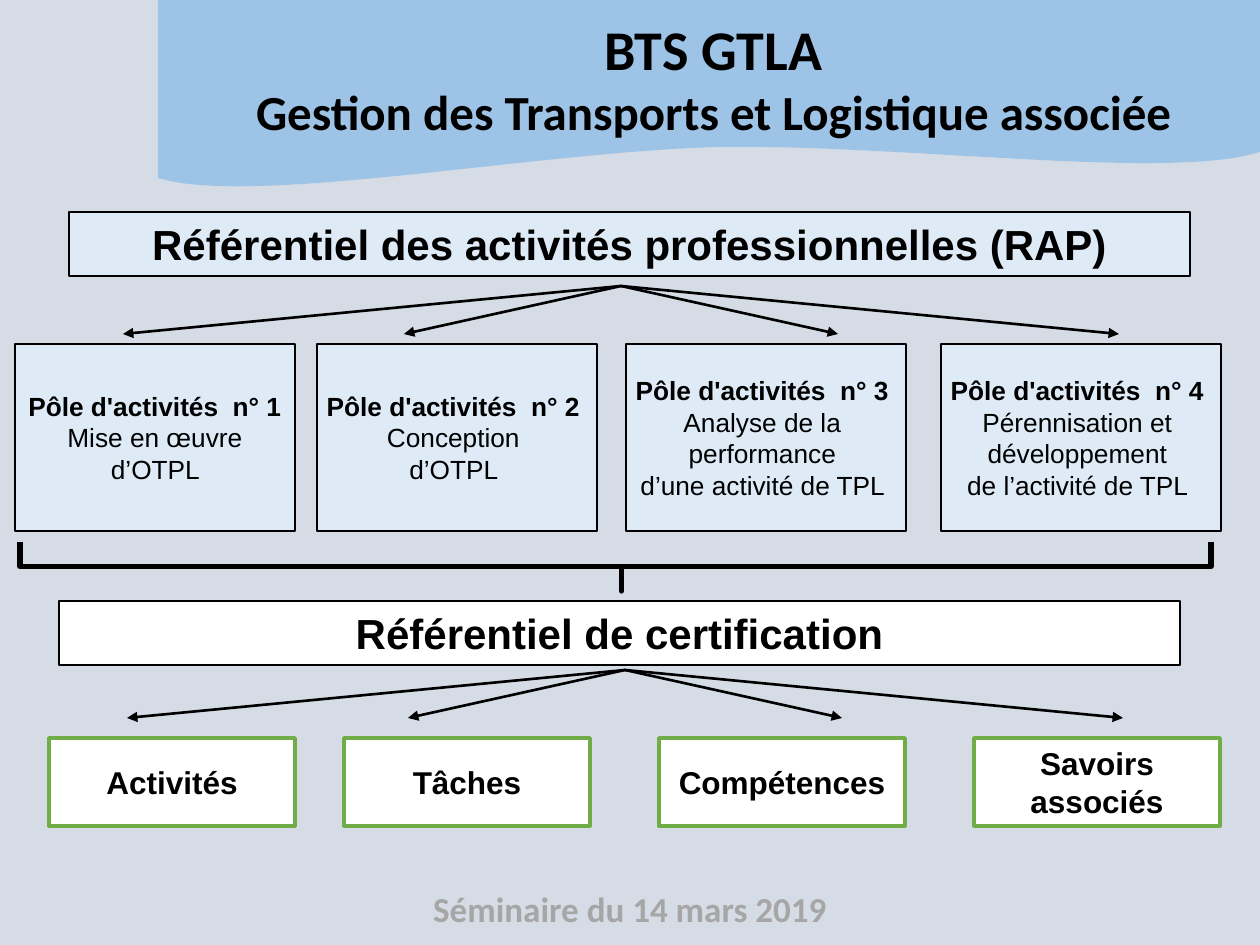
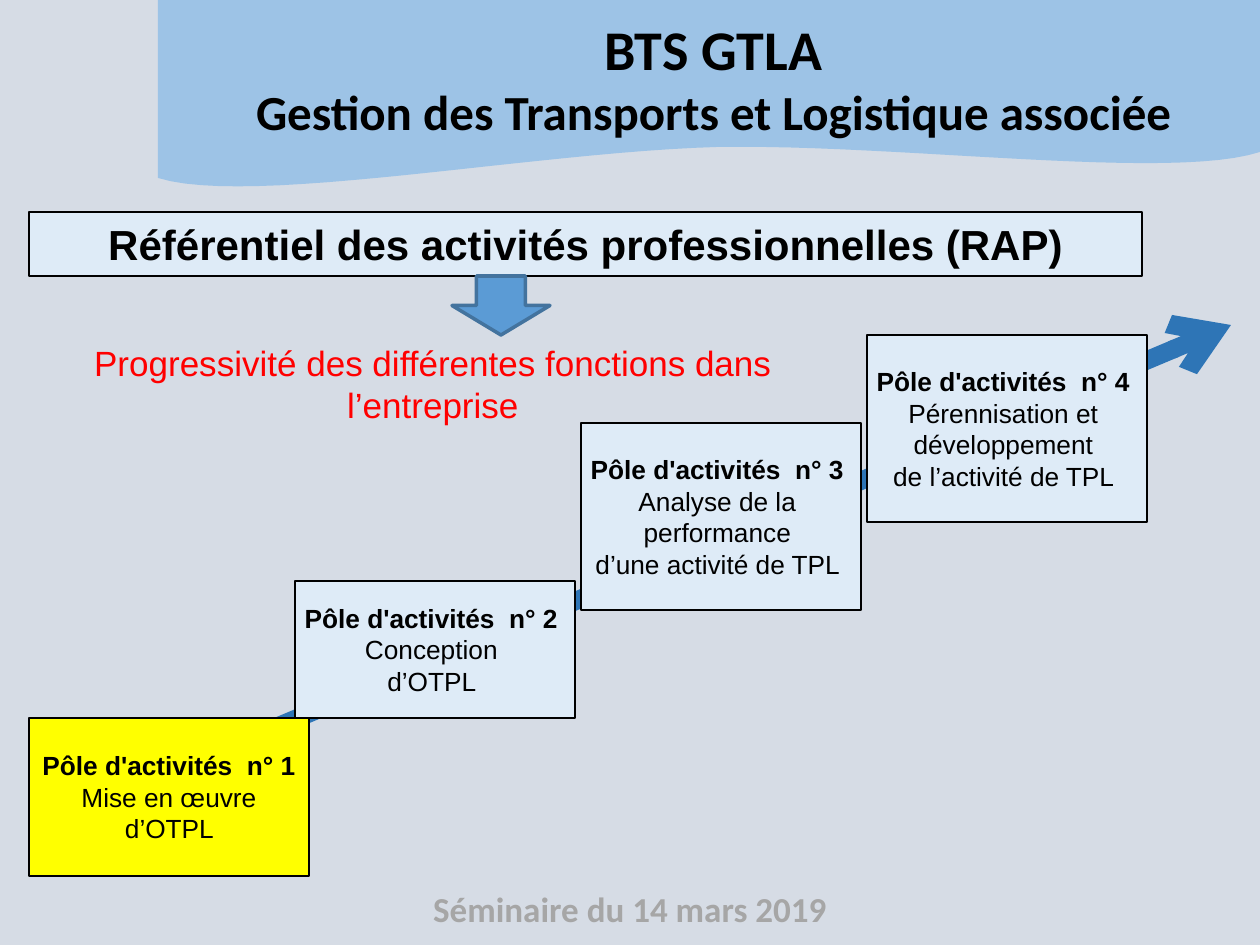
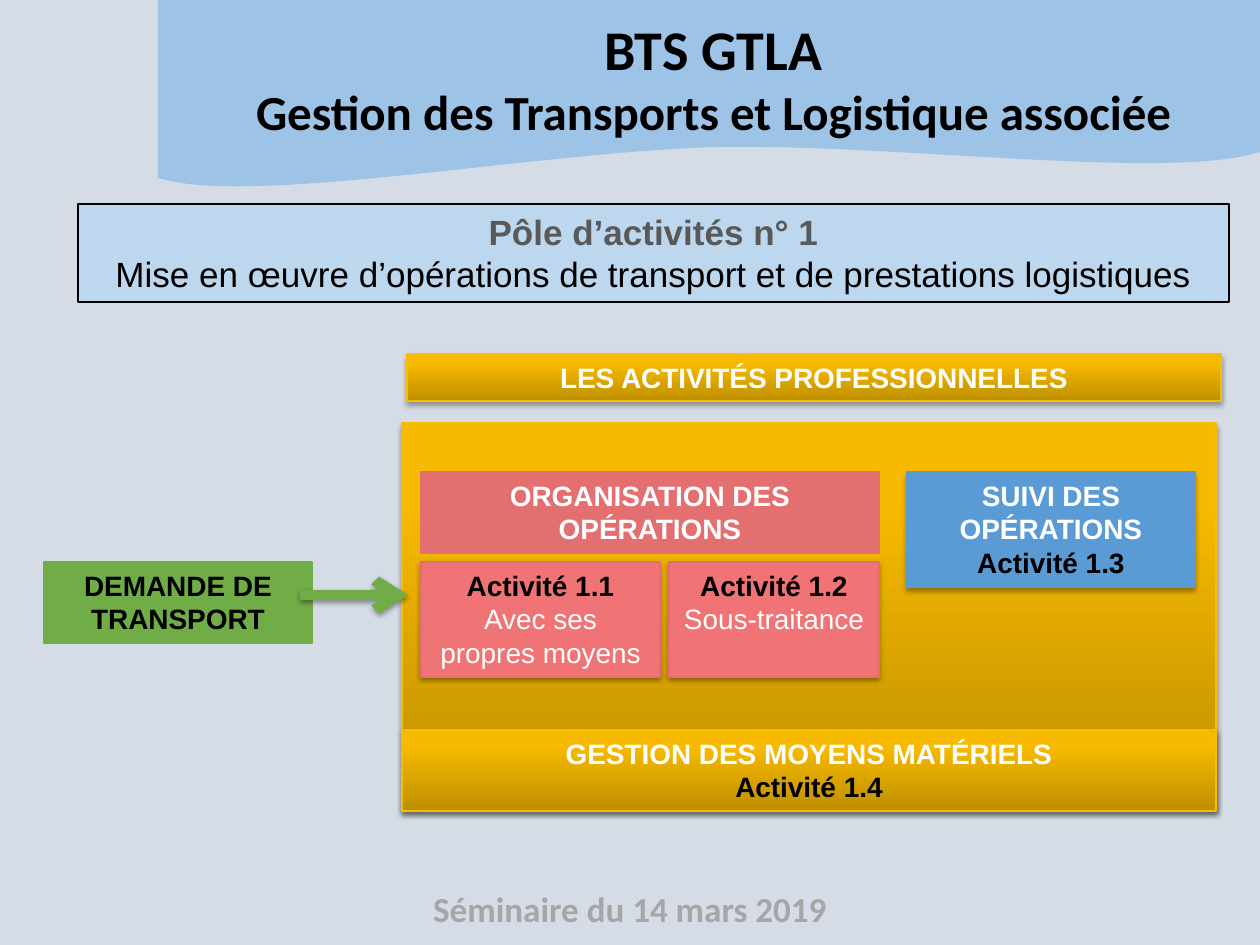
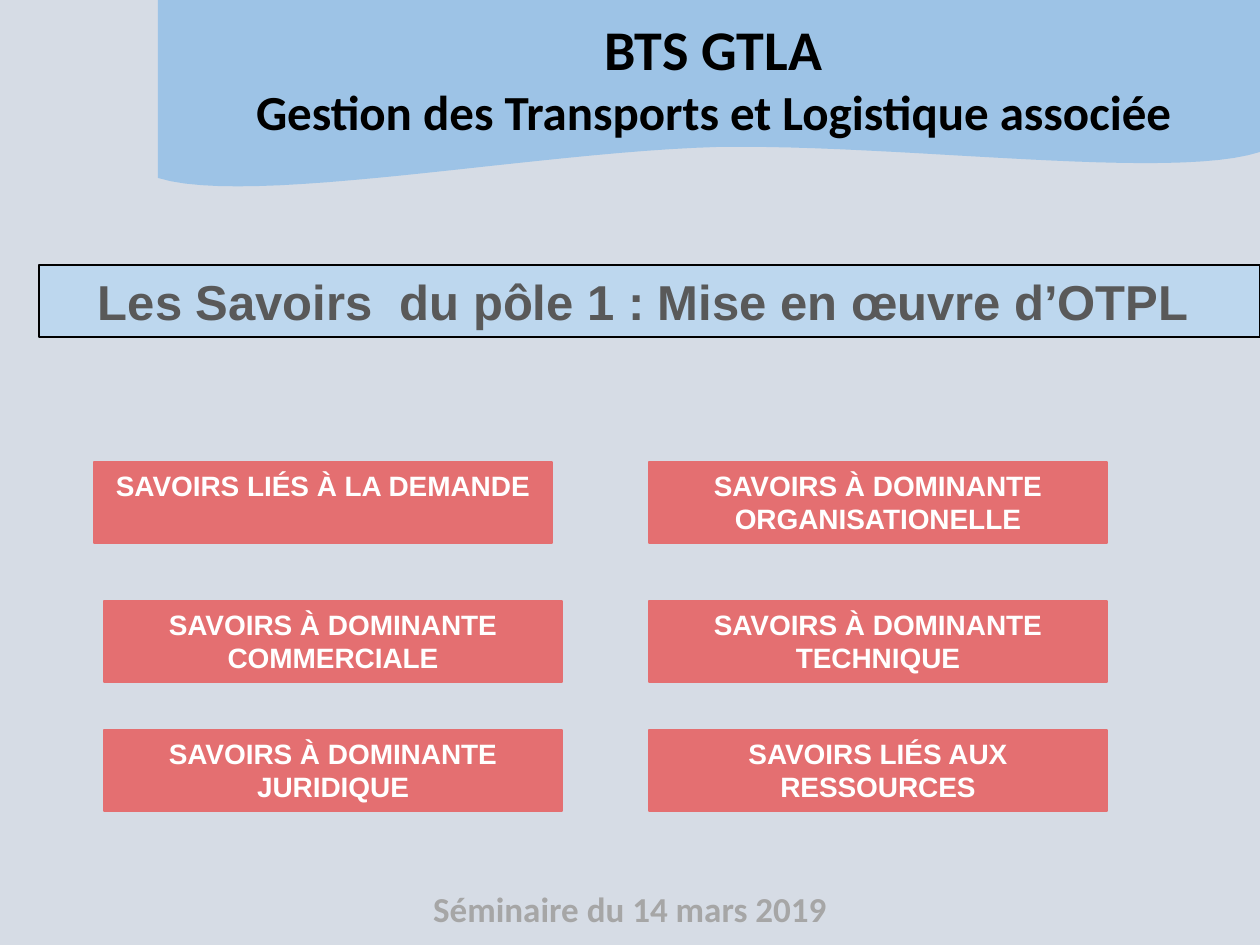
from copy import deepcopy

from lxml.etree import SubElement
from pptx import Presentation
from pptx.dml.color import RGBColor
from pptx.enum.shapes import MSO_CONNECTOR, MSO_SHAPE
from pptx.enum.text import MSO_ANCHOR, PP_ALIGN
from pptx.oxml.ns import qn
from pptx.util import Emu, Pt

EMU_PER_PX = 914400 / 126
WIDTH, HEIGHT = 1260, 945

BLACK = RGBColor(0x00, 0x00, 0x00)
WHITE = RGBColor(0xFF, 0xFF, 0xFF)
BACKDROP = RGBColor(0xD6, 0xDC, 0xE5)
WAVE_BLUE = RGBColor(0x9D, 0xC3, 0xE6)
PALE_BLUE = RGBColor(0xDE, 0xEB, 0xF7)
SOFT_BLUE = RGBColor(0xBD, 0xD7, 0xEE)
BLUE = RGBColor(0x5B, 0x9B, 0xD5)
BLUE_EDGE = RGBColor(0x43, 0x73, 0x9E)
DEEP_BLUE = RGBColor(0x2E, 0x75, 0xB6)
GREEN = RGBColor(0x70, 0xAD, 0x47)
YELLOW = RGBColor(0xFF, 0xFF, 0x00)
RED = RGBColor(0xFF, 0x00, 0x00)
CORAL = RGBColor(0xE4, 0x6F, 0x71)
LIGHT_CORAL = RGBColor(0xF0, 0x74, 0x76)
GOLD_EDGE = RGBColor(0xF9, 0xBC, 0x00)
GREY = RGBColor(0x59, 0x59, 0x59)
FOOTER_GREY = RGBColor(0xA6, 0xA6, 0xA6)
GOLD = [(0, RGBColor(0xBE, 0x8F, 0x00)),
        (0.8, RGBColor(0xF7, 0xBA, 0x00)),
        (1, RGBColor(0xF8, 0xBB, 0x00))]

STRONG_SHADOW = (38, 1.6)
SOFT_SHADOW = (35, 1.8)

BAND = (24, BLACK, True)
POLE_NAME = (15, BLACK, True)
POLE_DETAIL = (15, BLACK, False)
LEAF = (18, BLACK, True)
LABEL_WHITE = (16, WHITE, True)
LABEL_BLACK = (16, BLACK, True)
LABEL_PLAIN = (16, WHITE, False)

TITLE = [("BTS GTLA", (32, BLACK, True)),
         ("Gestion des Transports et Logistique associée", (28, BLACK, True))]
FOOTER = [("Séminaire du 14 mars 2019", (20, FOOTER_GREY, True))]
WAVE_TOP = [(158, 0), (1260, 0), (1260, 152)]
WAVE_CURVES = [[(1260, 152), (1171, 181), (902, 144), (718, 147)],
               [(718, 147), (534, 152), (251, 207), (158, 178)]]

RAP = "Référentiel des activités professionnelles (RAP)"
POLES = [
    ["Pôle d'activités  n° 1", "Mise en œuvre", " d’OTPL "],
    ["Pôle d'activités  n° 2 ", "Conception ", "d’OTPL "],
    ["Pôle d'activités  n° 3 ", "Analyse de la ", "performance ",
     "d’une activité de TPL "],
    ["Pôle d'activités  n° 4 ", "Pérennisation et ", "développement ",
     "de l’activité de TPL "],
]
POLE_LEFTS = [15, 317, 626, 941]
POLE_STEPS = [(29, 718, 280, 158), (295, 581, 280, 137),
              (581, 423, 280, 187), (867, 335, 280, 187)]
CERTIFICATION = "Référentiel de certification"
CERTIFICATION_PARTS = [(49, "Activités"), (344, "Tâches"),
                       (659, "Compétences"), (974, "Savoirs associés")]
FAN_REACH = [-498, 498, -217, 217]
FAN_DROP = 48
FANS = [(621, 286), (625, 670)]
BRACE = (20, 542, 1191, 49)

PROGRESSION = "Progressivité des différentes fonctions dans l’entreprise"

POLE_1 = [("Pôle d’activités n° 1", (20, GREY, True)),
          ("Mise en œuvre d’opérations de transport et de prestations logistiques",
           (20, BLACK, False))]
ACTIVITY_BLOCKS = [
    ((402, 423, 814, 387), GOLD, GOLD_EDGE, SOFT_SHADOW, []),
    ((44, 562, 268, 81), GREEN, GREEN, None,
     [("DEMANDE DE TRANSPORT", LABEL_BLACK)]),
    ((421, 472, 458, 81), CORAL, CORAL, None,
     [("ORGANISATION DES OPÉRATIONS", LABEL_WHITE)]),
    ((421, 562, 239, 115), LIGHT_CORAL, CORAL, STRONG_SHADOW,
     [("Activité 1.1", LABEL_BLACK), ("Avec ses propres moyens", LABEL_PLAIN)]),
    ((669, 562, 210, 115), LIGHT_CORAL, CORAL, STRONG_SHADOW,
     [("Activité 1.2", LABEL_BLACK), ("Sous-traitance", LABEL_PLAIN)]),
    ((907, 472, 288, 115), BLUE, BLUE, SOFT_SHADOW,
     [("SUIVI DES OPÉRATIONS", LABEL_WHITE), ("Activité 1.3", LABEL_BLACK)]),
    ((402, 730, 814, 81), GOLD, GOLD_EDGE, SOFT_SHADOW,
     [("GESTION DES MOYENS MATÉRIELS", LABEL_WHITE), ("Activité 1.4", LABEL_BLACK)]),
    ((407, 354, 814, 47), GOLD, GOLD_EDGE, SOFT_SHADOW,
     [("LES ACTIVITÉS PROFESSIONNELLES", LABEL_WHITE)]),
]

SAVOIRS_TITLE = "Les Savoirs  du pôle 1 : Mise en œuvre d’OTPL "
SAVOIRS = [
    (94, 462, "SAVOIRS LIÉS À LA DEMANDE"),
    (649, 462, "SAVOIRS À DOMINANTE ORGANISATIONELLE"),
    (104, 601, "SAVOIRS À DOMINANTE COMMERCIALE"),
    (649, 601, "SAVOIRS À DOMINANTE TECHNIQUE"),
    (104, 730, "SAVOIRS À DOMINANTE JURIDIQUE"),
    (649, 730, "SAVOIRS LIÉS AUX RESSOURCES"),
]


def px(*lengths):
    return [Emu(round(length * EMU_PER_PX)) for length in lengths]


def write(shape, lines, font="Arial", anchor=MSO_ANCHOR.TOP, wrap=True):
    frame = shape.text_frame
    frame.word_wrap = wrap
    frame.vertical_anchor = anchor
    frame.text = "\n".join(text for text, _ in lines)
    for paragraph, (_, (size, color, bold)) in zip(frame.paragraphs, lines):
        paragraph.alignment = PP_ALIGN.CENTER
        for run in paragraph.runs:
            run.font.name = font
            run.font.size = Pt(size)
            run.font.bold = bold
            run.font.color.rgb = color


def set_effects(shape, shadow=None):
    properties = shape._element.spPr
    for effects in properties.findall(qn("a:effectLst")):
        properties.remove(effects)
    effects = SubElement(properties, qn("a:effectLst"))
    if shadow:
        opacity, distance = shadow
        outer = SubElement(effects, qn("a:outerShdw"), blurRad=str(Pt(3.1)),
                           dist=str(Pt(distance)), dir="5400000", rotWithShape="0")
        color = SubElement(outer, qn("a:srgbClr"), val=str(BLACK))
        SubElement(color, qn("a:alpha"), val=str(opacity * 1000))


def paint(shape, fill):
    if fill is None:
        shape.fill.background()
    elif isinstance(fill, RGBColor):
        shape.fill.solid()
        shape.fill.fore_color.rgb = fill
    else:
        shape.fill.gradient()
        shape.fill.gradient_angle = 90
        stops = shape._element.spPr.find(".//" + qn("a:gsLst"))
        stops.append(deepcopy(stops[-1]))
        for stop, (position, color) in zip(shape.fill.gradient_stops, fill):
            stop.position = position
            stop.color.rgb = color


def add_block(slide, frame, fill, edge=BLACK, weight=0.75, kind=MSO_SHAPE.RECTANGLE,
              shadow=None, lines=(), anchor=MSO_ANCHOR.MIDDLE, wrap=True):
    block = slide.shapes.add_shape(kind, *px(*frame))
    paint(block, fill)
    block.line.color.rgb = edge
    block.line.width = Pt(weight)
    set_effects(block, shadow)
    if lines:
        write(block, lines, anchor=anchor, wrap=wrap)
    return block


def add_text(slide, frame, lines, font="Arial"):
    text = slide.shapes.add_textbox(*px(*frame))
    write(text, lines, font)
    return text


def add_arrow(slide, start, end, color, weight, head, shadow=None):
    arrow = slide.shapes.add_connector(MSO_CONNECTOR.STRAIGHT, *px(*start, *end))
    arrow.line.color.rgb = color
    arrow.line.width = Pt(weight)
    SubElement(arrow.line._get_or_add_ln(), qn("a:tailEnd"), type=head)
    set_effects(arrow, shadow)


def add_pole(slide, frame, pole, fill=PALE_BLUE):
    name, *details = pole
    lines = [(name, POLE_NAME)] + [(detail, POLE_DETAIL) for detail in details]
    add_block(slide, frame, fill, lines=lines, wrap=False)


def bezier(points, steps=24):
    for step in range(1, steps + 1):
        t = step / steps
        weights = ((1 - t) ** 3, 3 * t * (1 - t) ** 2, 3 * t * t * (1 - t), t ** 3)
        yield tuple(sum(w * point[axis] for w, point in zip(weights, points))
                    for axis in (0, 1))


def decorate(layout, slide):
    layout.background.fill.solid()
    layout.background.fill.fore_color.rgb = BACKDROP
    footer = add_text(slide, (315, 881, 630, 55), FOOTER, "Calibri")
    outline = WAVE_TOP + [point for curve in WAVE_CURVES for point in bezier(curve)]
    start, *rest = [px(*point) for point in outline]
    builder = slide.shapes.build_freeform(*start)
    builder.add_line_segments(rest, close=True)
    wave = builder.convert_to_shape()
    paint(wave, WAVE_BLUE)
    wave.line.fill.background()
    set_effects(wave)
    title = add_text(slide, (236, 8, 955, 140), TITLE, "Calibri")
    for part in (footer, wave, title):
        layout.shapes._spTree.append(part._element)


def draw_frameworks(slide):
    add_block(slide, (69, 212, 1121, 64), PALE_BLUE, lines=[(RAP, BAND)])
    for left, pole in zip(POLE_LEFTS, POLES):
        add_pole(slide, (left, 344, 280, 187), pole)
    left, top, width, height = BRACE
    brace = add_block(slide, (left + (width - height) / 2, top + (height - width) / 2,
                              height, width), None, weight=3, kind=MSO_SHAPE.LEFT_BRACE)
    brace.rotation = 270
    brace.adjustments[0] = 0
    brace.adjustments[1] = 0.505
    add_block(slide, (59, 601, 1121, 64), WHITE, lines=[(CERTIFICATION, BAND)])
    for left, part in CERTIFICATION_PARTS:
        add_block(slide, (left, 738, 246, 88), WHITE, GREEN, 2, lines=[(part, LEAF)])
    for x, y in FANS:
        for reach in FAN_REACH:
            add_arrow(slide, (x, y), (x + reach, y + FAN_DROP), BLACK, 1.5, "triangle")


def draw_progression(slide):
    add_arrow(slide, (39, 827), (1231, 325), DEEP_BLUE, 10.5, "arrow")
    for index, (frame, pole) in enumerate(zip(POLE_STEPS, POLES)):
        add_pole(slide, frame, pole, PALE_BLUE if index else YELLOW)
    add_block(slide, (29, 212, 1113, 64), PALE_BLUE, lines=[(RAP, BAND)])
    add_block(slide, (452, 276, 98, 59), BLUE, BLUE_EDGE, 2, MSO_SHAPE.DOWN_ARROW)
    add_text(slide, (29, 335, 808, 97), [(PROGRESSION, (20, RED, False))])


def draw_activities(slide):
    for frame, fill, edge, shadow, lines in ACTIVITY_BLOCKS:
        add_block(slide, frame, fill, edge, shadow=shadow, lines=lines,
                  anchor=MSO_ANCHOR.TOP)
    add_arrow(slide, (300, 595), (408, 595), GREEN, 6, "arrow", STRONG_SHADOW)
    add_block(slide, (78, 204, 1151, 98), SOFT_BLUE, lines=POLE_1)


def draw_savoirs(slide):
    add_block(slide, (39, 265, 1221, 72), SOFT_BLUE,
              lines=[(SAVOIRS_TITLE, (28, GREY, True))])
    for left, top, savoir in SAVOIRS:
        add_block(slide, (left, top, 458, 81), CORAL, CORAL,
                  lines=[(savoir, LABEL_WHITE)], anchor=MSO_ANCHOR.TOP)


def main():
    deck = Presentation()
    deck.slide_width, deck.slide_height = px(WIDTH, HEIGHT)
    blank = deck.slide_layouts[6]
    drawings = [draw_frameworks, draw_progression, draw_activities, draw_savoirs]
    slides = [deck.slides.add_slide(blank) for _ in drawings]
    decorate(blank, slides[0])
    for draw, slide in zip(drawings, slides):
        draw(slide)
    deck.save("out.pptx")


if __name__ == "__main__":
    main()
